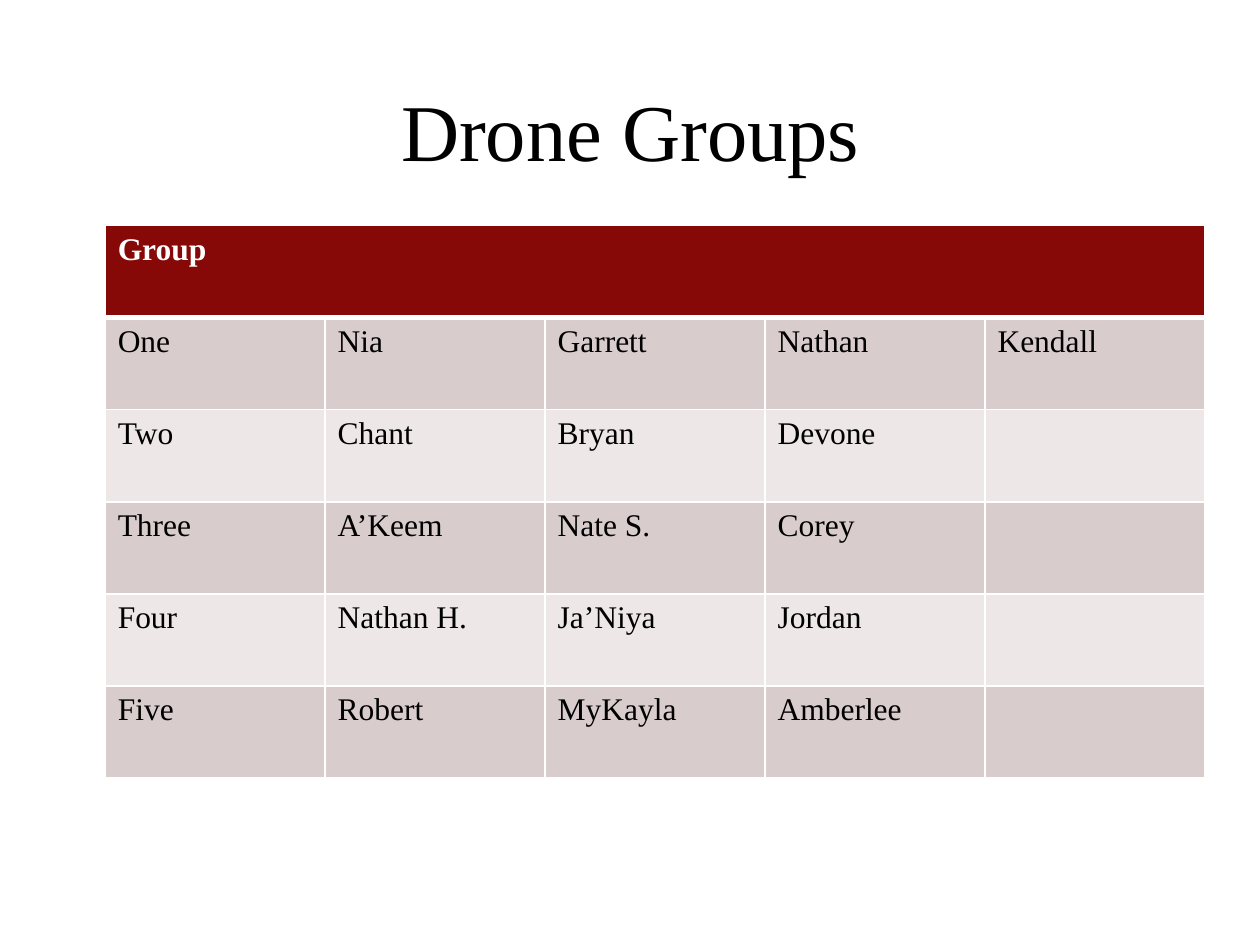
from lxml import etree
from pptx import Presentation
from pptx.dml.color import RGBColor
from pptx.enum.text import MSO_ANCHOR, PP_ALIGN
from pptx.oxml.ns import qn
from pptx.util import Cm, Pt

MIDDLE = MSO_ANCHOR.MIDDLE
CENTER = PP_ALIGN.CENTER
FONT = "Times New Roman"
COLORS = {
    "text": "000000",
    "white": "FFFFFF",
    "head": "860908",
    "dark": "D9CCCC",
    "light": "EDE7E7",
}
HEAD = "Group"
GROUPS = [
    ["One", "Nia", "Garrett", "Nathan", "Kendall"],
    ["Two", "Chant", "Bryan", "Devone", ""],
    ["Three", "A’Keem", "Nate S.", "Corey", ""],
    ["Four", "Nathan H.", "Ja’Niya", "Jordan", ""],
    ["Five", "Robert", "MyKayla", "Amberlee", ""],
]


def color(name):
    return RGBColor.from_string(COLORS[name])


def style(font, size, name, bold=False):
    font.name = FONT
    font.size = Pt(size)
    font.bold = bold
    font.color.rgb = color(name)


def add_title(slide, text, left, top, width, height):
    title = slide.shapes.title
    title.left, title.top, title.width, title.height = left, top, width, height
    frame = title.text_frame
    frame.text = text
    frame.vertical_anchor = MIDDLE
    para = frame.paragraphs[0]
    para.alignment = CENTER
    style(para.runs[0].font, 46, "text")


def add_edges(cell, widths):
    props = cell._tc.get_or_add_tcPr()
    for side, width in widths.items():
        line = etree.SubElement(props, qn(f"a:ln{side}"), w=str(Pt(width)))
        fill = etree.SubElement(line, qn("a:solidFill"))
        etree.SubElement(fill, qn("a:srgbClr"), val=COLORS["white"])


def fill_cell(cell, text, row):
    # The header row is set off by a thicker rule
    top = 3 if row == 1 else 1
    base = 3 if row == 0 else 1
    add_edges(cell, {"L": 1, "R": 1, "T": top, "B": base})
    shade = "head" if row == 0 else "dark" if row % 2 else "light"
    cell.fill.solid()
    cell.fill.fore_color.rgb = color(shade)
    cell.text_frame.text = text
    para = cell.text_frame.paragraphs[0]
    ink = "white" if row == 0 else "text"
    for part in para.runs or [para]:
        style(part.font, 18, ink, bold=row == 0)


def add_groups(slide, left, top, width, height):
    count = len(GROUPS[0])
    rows = [[HEAD] + [""] * (count - 1)] + GROUPS
    table = slide.shapes.add_table(
        len(rows), count, left, top, width, height).table
    for r, names in enumerate(rows):
        for c, name in enumerate(names):
            fill_cell(table.cell(r, c), name, r)
    table.cell(0, 0).merge(table.cell(0, count - 1))


def main():
    deck = Presentation()
    deck.slide_width, deck.slide_height = Cm(25.4), Cm(19.05)
    slide = deck.slides.add_slide(deck.slide_layouts[5])
    # Heading
    add_title(slide, "Drone Groups", Cm(2.54), Cm(1.4), Cm(20.32), Cm(2.41))
    # Group members
    add_groups(slide, Cm(2.12), Cm(4.55), Cm(22.17), Cm(11.13))
    deck.save("out.pptx")


if __name__ == "__main__":
    main()
